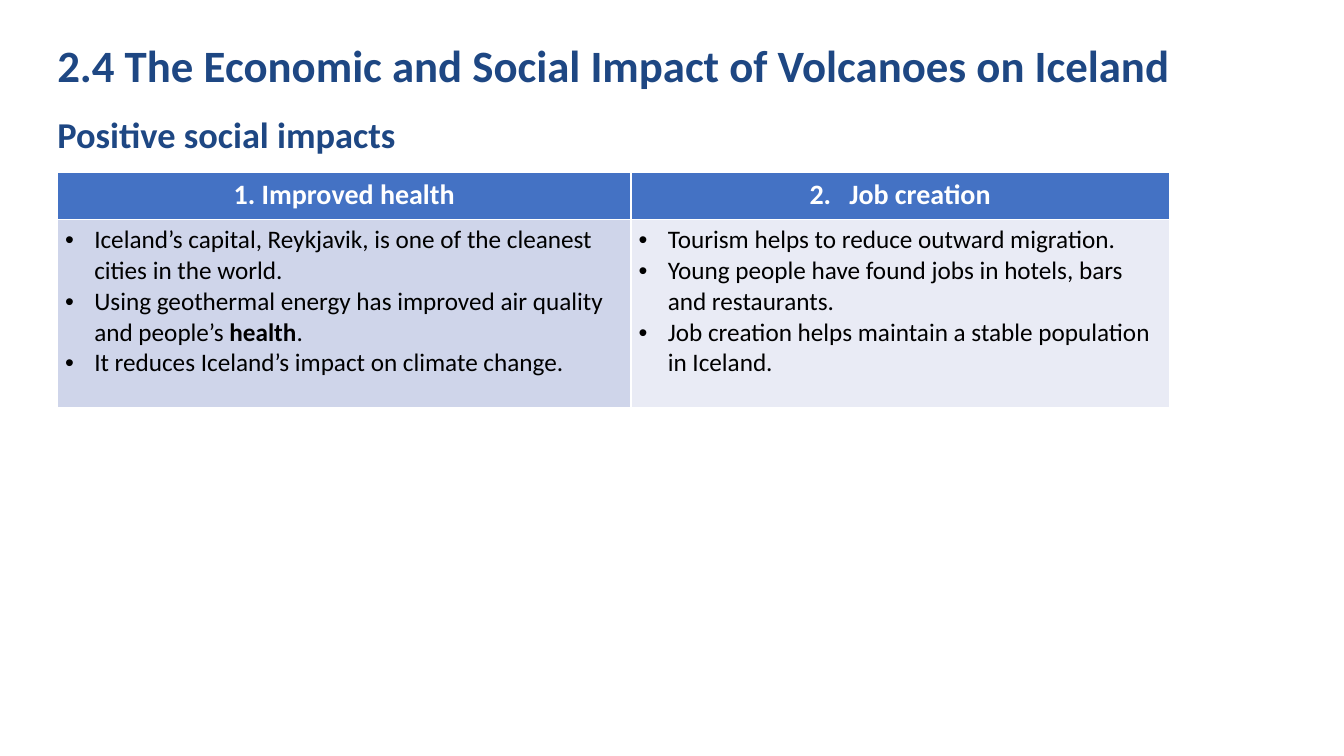
from pptx import Presentation
from pptx.dml.color import RGBColor as RGB
from pptx.enum.text import PP_ALIGN as AL
from pptx.oxml.ns import qn
from pptx.util import Pt
from lxml.etree import SubElement, Element

# Content
TITLE = "2.4 The Economic and Social Impact of Volcanoes on Iceland"
SUBTITLE = "Positive social impacts"
IMPACTS = [
    ("1. Improved health", [
        ["Iceland’s capital, Reykjavik, is one of the cleanest cities in the world."],
        ["Using geothermal energy has improved air quality and people’s ", "health", "."],
        ["It reduces Iceland’s impact on climate change."],
    ]),
    ("2.\tJob creation", [
        ["Tourism helps to reduce outward migration."],
        ["Young people have found jobs in hotels, bars and restaurants."],
        ["Job creation helps maintain a stable population in Iceland."],
    ]),
]

# Look
COLORS = {"heading": "1E4783", "header": "4472C4", "white": "FFFFFF", "black": "000000"}
BODY_FILLS = ["CFD5EA", "E9EBF5"]
HEADINGS = [  # text, left, top, width, height, size, line spacing
    (SUBTITLE, 33.84, 76.32, 342, 38.88, 26, 1.0),
    (TITLE, 33.84, 28.08, 869, 47.52, 32, 0.9),
]
COLS, ROWS = [409.68, 384.48], [33.84, 133.92]
TABLE_LEFT, TABLE_TOP = 41.04, 123.12
MARGINS = {"margin_left": 5.5, "margin_right": 5.5, "margin_top": 3.6, "margin_bottom": 3.6}
HEADER_INDENT, BULLET_INDENT = 28.35, 20.8


def add_text(p, text, size, color, bold=False):
    r = p.add_run()
    r.text = text
    for key, value in {"name": "Calibri", "size": Pt(size), "bold": bold}.items():
        setattr(r.font, key, value)
    r.font.color.rgb = RGB.from_string(COLORS[color])


def hang(p, indent):
    pPr = p._p.get_or_add_pPr()
    pPr.set("marL", str(Pt(indent)))
    pPr.set("indent", str(-Pt(indent)))
    return pPr


def format_cell(cell, fill):
    for key, value in MARGINS.items():
        setattr(cell, key, Pt(value))
    cell.fill.solid()
    cell.fill.fore_color.rgb = RGB.from_string(fill)
    tcPr = cell._tc.get_or_add_tcPr()
    for i, side in enumerate(("a:lnL", "a:lnR", "a:lnT", "a:lnB")):
        ln = Element(qn(side), w=str(Pt(1)))
        SubElement(SubElement(ln, qn("a:solidFill")), qn("a:srgbClr"), val=COLORS["white"])
        tcPr.insert(i, ln)


prs = Presentation()
prs.slide_width, prs.slide_height = Pt(960), Pt(540)
s = prs.slides.add_slide(prs.slide_layouts[6])

# Impact table
tbl = s.shapes.add_table(2, len(IMPACTS), Pt(TABLE_LEFT), Pt(TABLE_TOP),
                         Pt(sum(COLS)), Pt(sum(ROWS))).table
for row, height in zip(tbl.rows, ROWS):
    row.height = Pt(height)
for c, (header, bullets) in enumerate(IMPACTS):
    tbl.columns[c].width = Pt(COLS[c])
    head, body = tbl.cell(0, c), tbl.cell(1, c)
    format_cell(head, COLORS["header"])
    format_cell(body, BODY_FILLS[c])

    p = head.text_frame.paragraphs[0]
    p.alignment = AL.CENTER
    if "\t" in header:
        hang(p, HEADER_INDENT)
    add_text(p, header, 20, "white", True)

    tf = body.text_frame
    for i, parts in enumerate(bullets):
        p = tf.add_paragraph() if i else tf.paragraphs[0]
        pPr = hang(p, BULLET_INDENT)
        SubElement(pPr, qn("a:buFont"), typeface="Arial")
        SubElement(pPr, qn("a:buChar"), char="•")
        for j, part in enumerate(parts):  # every second part is emphasised
            add_text(p, part, 18, "black", j % 2 == 1)

# Headings
for text, left, top, width, height, size, spacing in HEADINGS:
    tf = s.shapes.add_textbox(Pt(left), Pt(top), Pt(width), Pt(height)).text_frame
    tf.word_wrap = True
    p = tf.paragraphs[0]
    p.line_spacing = spacing
    add_text(p, text, size, "heading", True)

prs.save("out.pptx")
